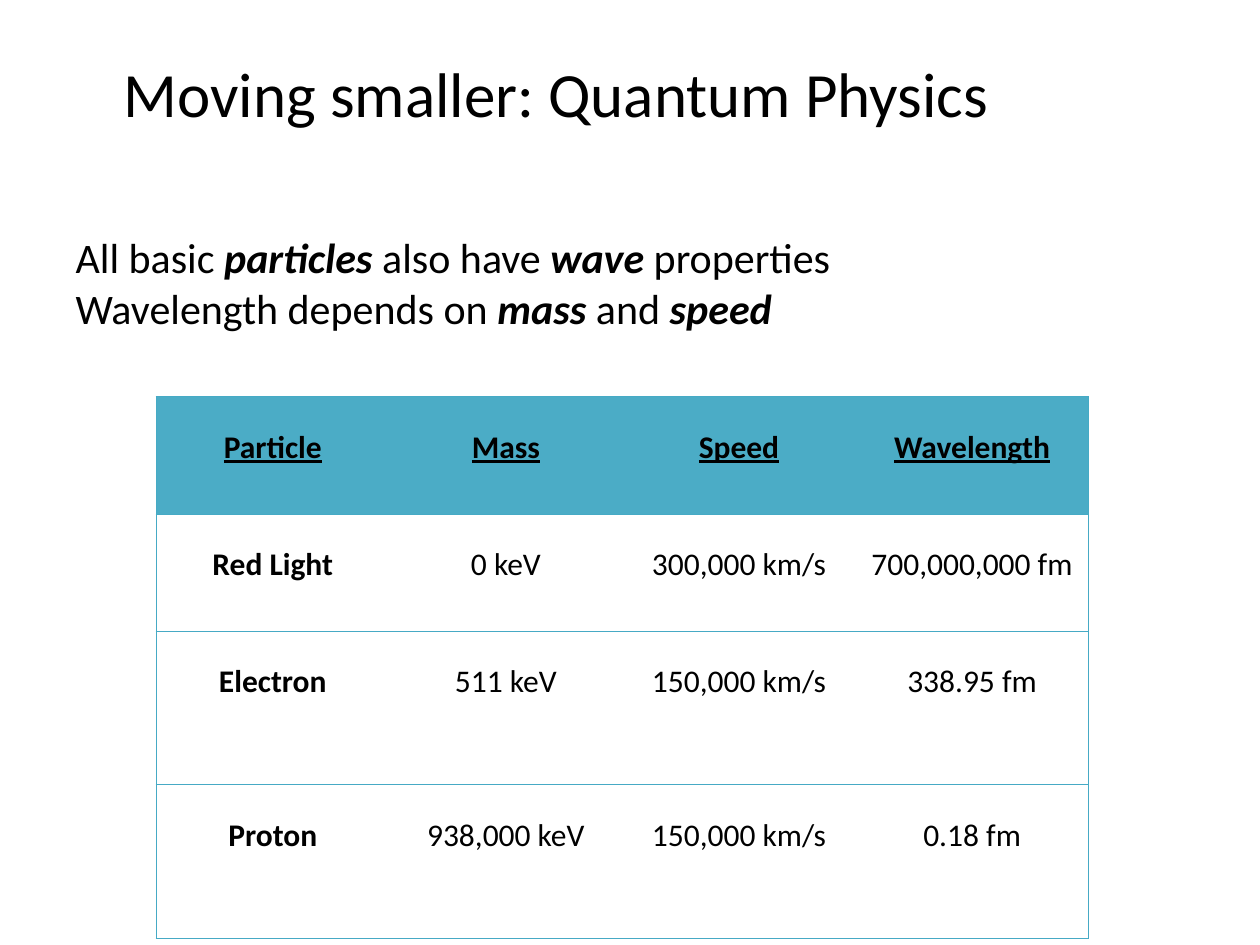
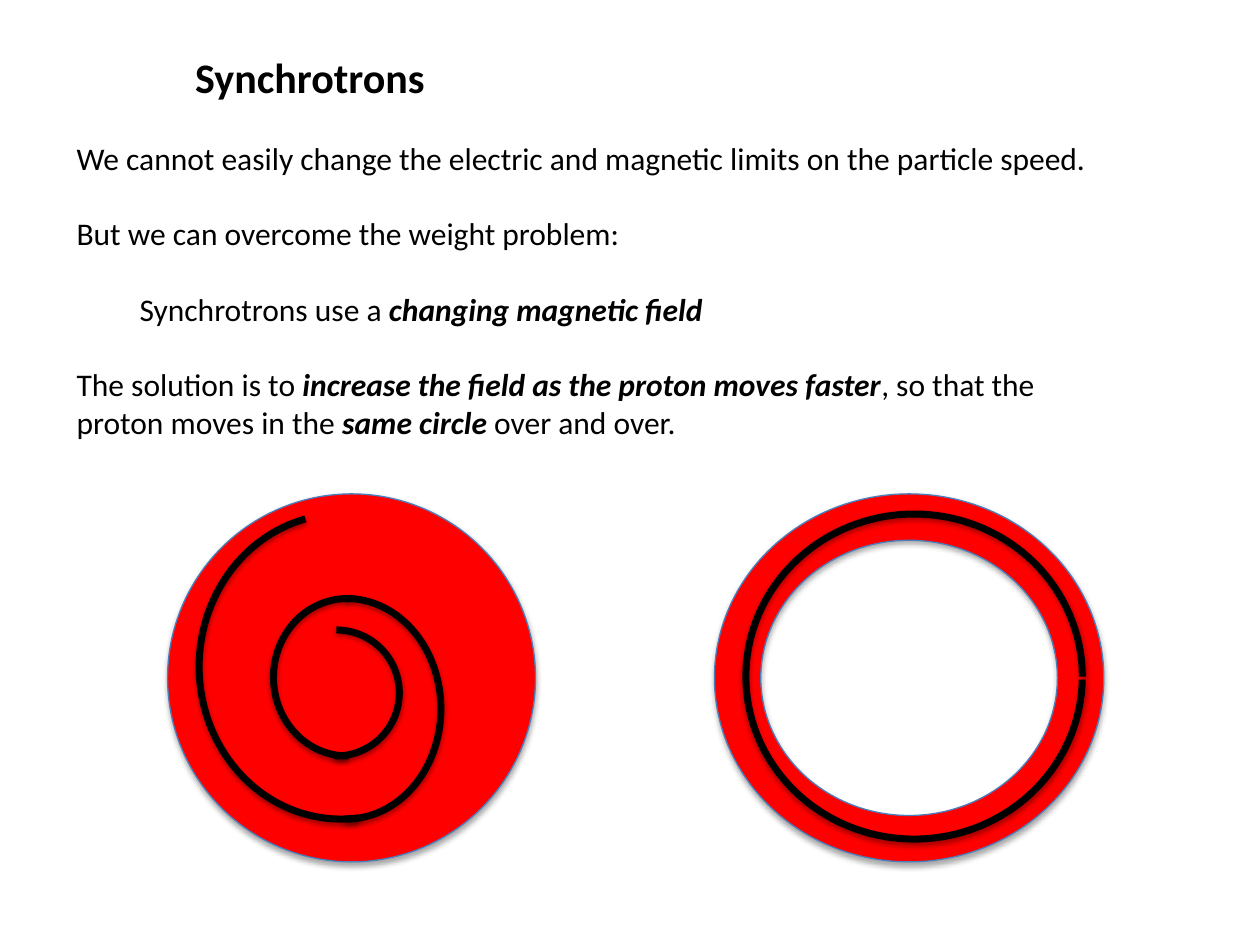
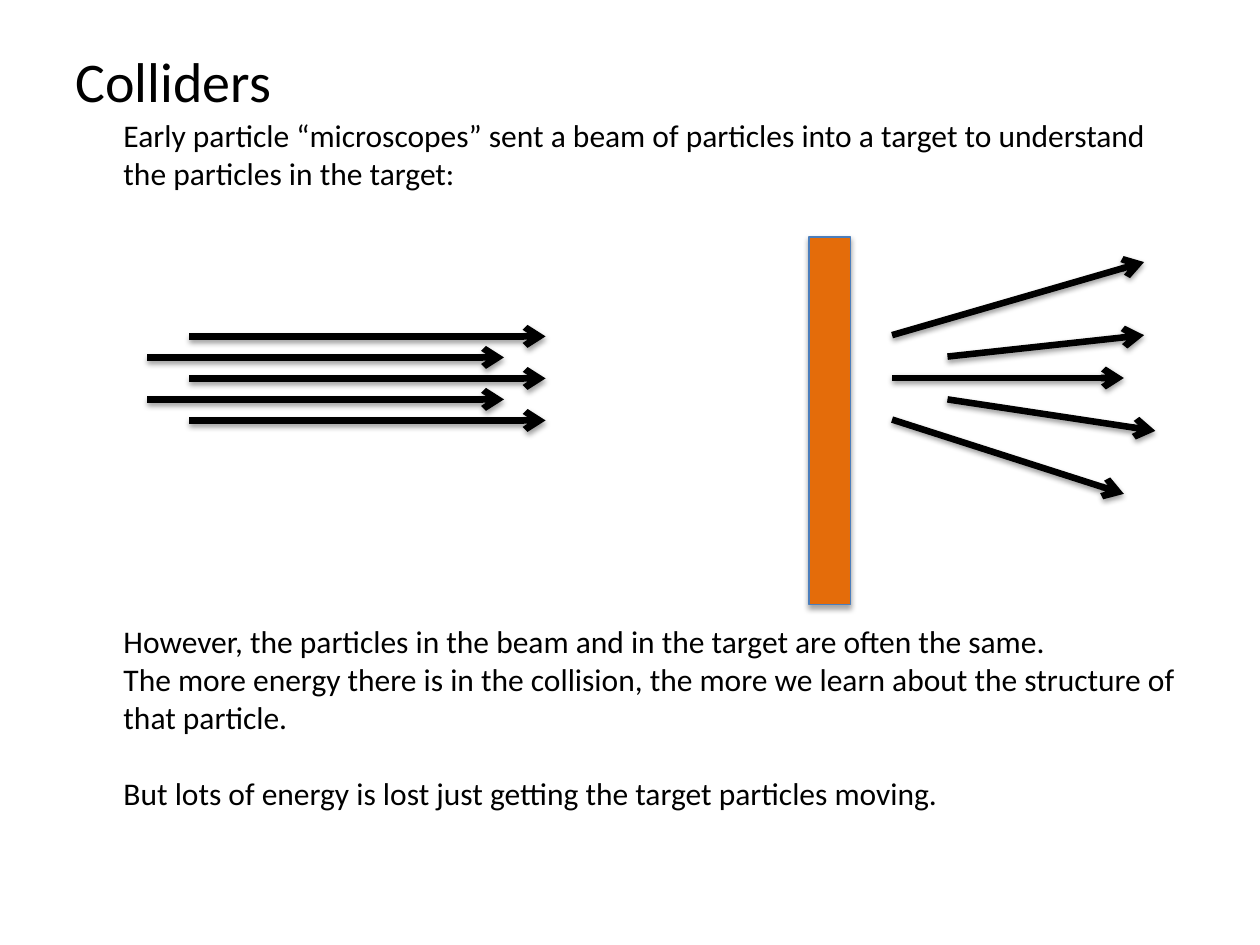
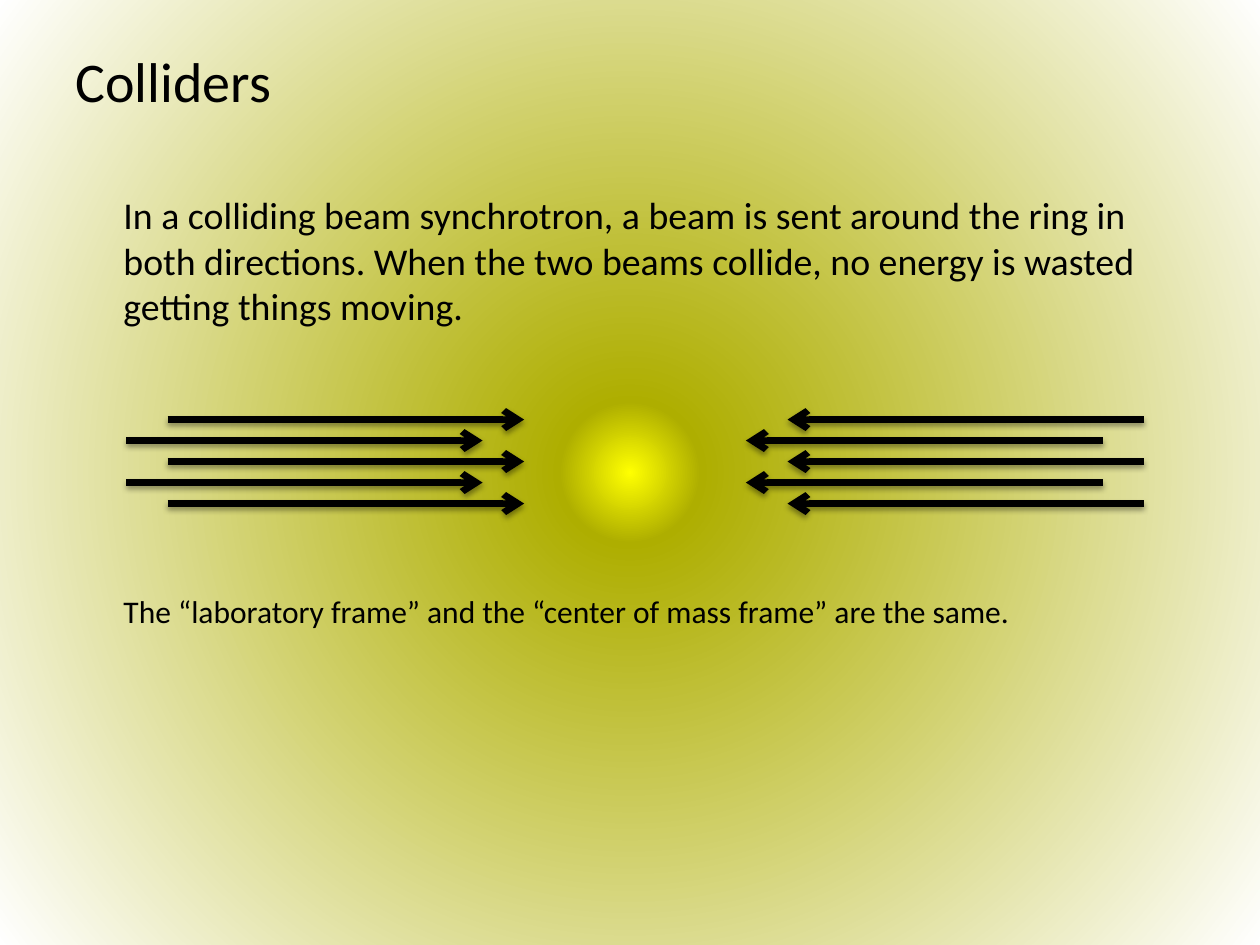
"""Builds four slides on particle waves, synchrotrons and colliders."""
from pptx import Presentation
from pptx.dml.color import RGBColor
from pptx.enum.shapes import MSO_CONNECTOR, MSO_SHAPE
from pptx.enum.text import MSO_AUTO_SIZE, PP_ALIGN
from pptx.oxml import parse_xml
from pptx.oxml.ns import nsdecls, qn
from pptx.util import Inches, Pt

BLACK = RGBColor(0x00, 0x00, 0x00)
RED = RGBColor(0xFF, 0x00, 0x00)
ORANGE = RGBColor(0xE4, 0x6C, 0x0A)
OUTLINE = RGBColor(0x4B, 0x7E, 0xBC)
HEADER = RGBColor(0x4B, 0xAC, 0xC6)
TABLE_LINE = RGBColor(0x46, 0xAA, 0xC5)
GLOW_STOPS = [(0, RGBColor(0xFF, 0xFF, 0x00)), (9, RGBColor(0xAE, 0xAE, 0x00)),
              (100, RGBColor(0xFF, 0xFF, 0xFF))]
FONT = "Calibri"
NO_TABLE_STYLE = "{2D5ABB26-0587-4C30-8999-92F81FD0307C}"
BLANK_LINE = 21.6


def write(frame, lines):
    """Fill a frame with (text, size, space before, left indent); *marked* words are bold italic."""
    for number, (text, size, before, left) in enumerate(lines):
        paragraph = frame.paragraphs[0] if number == 0 else frame.add_paragraph()
        paragraph.space_before = Pt(before)
        properties = paragraph._p.get_or_add_pPr()
        properties.set("marL", str(Inches(left)))
        properties.set("indent", "0")
        properties.append(parse_xml(f"<a:buNone {nsdecls('a')}/>"))
        paragraph.font.name = FONT
        paragraph.font.size = Pt(size)
        paragraph.font.color.rgb = BLACK
        for position, part in enumerate(text.split("*")):
            if part:
                span = paragraph.add_run()
                span.text = part
                if position % 2:
                    span.font.bold = span.font.italic = True


def draw_arrow(page, x1, y1, x2, y2):
    """Draw a thick black arrow that keeps the theme's shadow."""
    arrow = page.shapes.add_connector(
        MSO_CONNECTOR.STRAIGHT, Inches(x1), Inches(y1), Inches(x2), Inches(y2))
    arrow.line.color.rgb = BLACK
    arrow.line.width = Pt(3.75)
    arrow.line._get_or_add_ln().append(
        parse_xml(f"<a:tailEnd {nsdecls('a')} type='arrow'/>"))


deck = Presentation()
deck.slide_width, deck.slide_height = Inches(10), Inches(7.5)
layouts = deck.slide_layouts
quantum, synchrotrons, fixed_target, colliding = [
    deck.slides.add_slide(layouts[index]) for index in (1, 5, 1, 1)]

for page, text, size, width, height in [
        (quantum, "Moving smaller: Quantum Physics", 36, 7.83, 0.87),
        (synchrotrons, "Synchrotrons", 24, 3.92, 0.62)]:
    title = page.shapes.title
    title.left, title.top = Inches(0.5), Inches(0.3)
    title.width, title.height = Inches(width), Inches(height)
    write(title.text_frame, [(text, size, 0, 0)])
synchrotrons.shapes.title.text_frame.paragraphs[0].font.bold = True

for page, top, height, lines in [
        (quantum, 1.79, 5.5, [
            ("All basic *particles* also have *wave* properties", 24, 0, 0),
            ("Wavelength depends on *mass* and *speed*", 24, 0, 0)]),
        (fixed_target, 0.32, 6.37, [
            ("Colliders", 32, 0, 0),
            ("Early particle “microscopes” sent a beam of particles into a target "
             "to understand the particles in the target:", 18, 1.4, 0.38),
            ("However, the particles in the beam and in the target are often the same.",
             18, 246, 0.38),
            ("The more energy there is in the collision, the more we learn about "
             "the structure of that particle.", 18, 0, 0.38),
            ("But lots of energy is lost just getting the target particles moving.",
             18, BLANK_LINE, 0.38)]),
        (colliding, 0.32, 6.93, [
            ("Colliders", 32, 0, 0),
            ("In a colliding beam synchrotron, a beam is sent around the ring in both "
             "directions. When the two beams collide, no energy is wasted getting "
             "things moving.", 21.6, 2 * BLANK_LINE + 1.4, 0.38),
            ("The “laboratory frame” and the “center of mass frame” are the same.",
             18, 7 * BLANK_LINE, 0.38)])]:
    body = page.placeholders[1]
    body.left, body.top = Inches(0.5), Inches(top)
    body.width, body.height = Inches(9), Inches(height)
    body.text_frame.auto_size = MSO_AUTO_SIZE.NONE
    write(body.text_frame, lines)

for page in (fixed_target, colliding):
    empty_title = page.shapes.title._element
    empty_title.getparent().remove(empty_title)

particles = [
    ("Particle", "Mass", "Speed", "Wavelength"),
    ("Red Light", "0 keV", "300,000 km/s", "700,000,000 fm"),
    ("Electron", "511 keV", "150,000 km/s", "338.95 fm"),
    ("Proton", "938,000 keV", "150,000 km/s", "0.18 fm")]
table_frame = quantum.shapes.add_table(
    4, 4, Inches(1.24), Inches(3.15), Inches(7.4), Inches(4.3))
table = table_frame.table
table.horz_banding = False
table._tbl.tblPr.find(qn("a:tableStyleId")).text = NO_TABLE_STYLE
for row, height in zip(table.rows, (0.93, 0.93, 1.22, 1.22)):
    row.height = Inches(height)
for row, values in enumerate(particles):
    for column, value in enumerate(values):
        cell = table.cell(row, column)
        cell.margin_top = Inches(0.25)
        write(cell.text_frame, [(value, 18, 0, 0)])
        paragraph = cell.text_frame.paragraphs[0]
        paragraph.alignment = PP_ALIGN.CENTER
        paragraph.font.bold = row == 0 or column == 0
        paragraph.font.underline = row == 0
        sides = ["lnL"] * (column == 0) + ["lnR"] * (column == 3) + ["lnT", "lnB"]
        for side in sides:
            cell._tc.get_or_add_tcPr().append(parse_xml(
                f"<a:{side} {nsdecls('a')} w='{Pt(0.75)}'><a:solidFill>"
                f"<a:srgbClr val='{TABLE_LINE}'/></a:solidFill></a:{side}>"))
        if row == 0:
            cell.fill.solid()
            cell.fill.fore_color.rgb = HEADER
        else:
            cell.fill.background()

box = synchrotrons.shapes.add_textbox(
    Inches(0.51), Inches(1.05), Inches(8.24), Inches(2.52))
box.text_frame.word_wrap = False
box.text_frame.auto_size = MSO_AUTO_SIZE.SHAPE_TO_FIT_TEXT
write(box.text_frame, [
    ("We cannot easily change the electric and magnetic limits on the particle speed.",
     18, 0, 0),
    ("But we can overcome the weight problem:", 18, BLANK_LINE, 0),
    ("Synchrotrons use a *changing magnetic field*", 18, BLANK_LINE, 0.5),
    ("The solution is to *increase the field as the proton moves faster*, so that the",
     18, BLANK_LINE, 0),
    ("proton moves in the *same circle* over and over.", 18, 0, 0)])

for page, kind, left, top, width, height, color in [
        (synchrotrons, MSO_SHAPE.DONUT, 5.67, 3.92, 3.09, 2.92, RED),
        (synchrotrons, MSO_SHAPE.OVAL, 1.33, 3.92, 2.92, 2.92, RED),
        (fixed_target, MSO_SHAPE.RECTANGLE, 6.42, 1.88, 0.33, 2.92, ORANGE)]:
    shape = page.shapes.add_shape(
        kind, Inches(left), Inches(top), Inches(width), Inches(height))
    shape.fill.solid()
    shape.fill.fore_color.rgb = color
    shape.line.color.rgb = OUTLINE
    shape.line.width = Pt(0.75)
    if kind == MSO_SHAPE.DONUT:
        shape.adjustments[0] = 0.126

for left, top, width, height, turn, start, end in [
        (2.17, 5, 1, 1, 0, 162, 54.99),
        (2.17, 4.75, 1.17, 1.25, 180, 161.46, 55.16),
        (2, 4.75, 1.5, 1.75, 0, 162, 54.54),
        (1.58, 4.08, 2.25, 2.42, 180, 158.02, 45.9),
        (5.92, 4.08, 2.67, 2.58, 0, 0.62, 0)]:
    orbit = synchrotrons.shapes.add_shape(
        MSO_SHAPE.ARC, Inches(left), Inches(top), Inches(width), Inches(height))
    orbit.rotation = turn
    orbit.adjustments[0], orbit.adjustments[1] = start, end
    orbit.fill.background()
    orbit.line.color.rgb = BLACK
    orbit.line.width = Pt(4)
    orbit._element.find(".//" + qn("a:effectRef")).set("idx", "1")

for page, top, start, length in [
        (fixed_target, 2.67, 1.5, 2.83),
        (colliding, 3.33, 1.33, 2.83),
        (colliding, 3.33, 9.08, -2.83)]:
    for number in range(5):
        x = start - 0.33 * (number % 2)
        y = top + number / 6
        draw_arrow(page, x, y, x + length, y)

for scattered in [
        (7.08, 2.66, 9.08, 2.08), (7.52, 2.83, 9.08, 2.66), (7.08, 3, 8.92, 3),
        (7.52, 3.17, 9.17, 3.42), (7.08, 3.33, 8.92, 3.92)]:
    draw_arrow(fixed_target, *scattered)

colliding.background.fill.solid()
background = colliding._element.find(".//" + qn("p:bgPr"))
background.remove(background[0])
stops = "".join(f"<a:gs pos='{place * 1000}'><a:srgbClr val='{color}'/></a:gs>"
                for place, color in GLOW_STOPS)
background.insert(0, parse_xml(
    f"<a:gradFill {nsdecls('a')} rotWithShape='1'><a:gsLst>{stops}</a:gsLst>"
    "<a:path path='circle'><a:fillToRect l='50000' t='50000' r='50000' b='50000'/>"
    "</a:path></a:gradFill>"))

deck.save("out.pptx")
